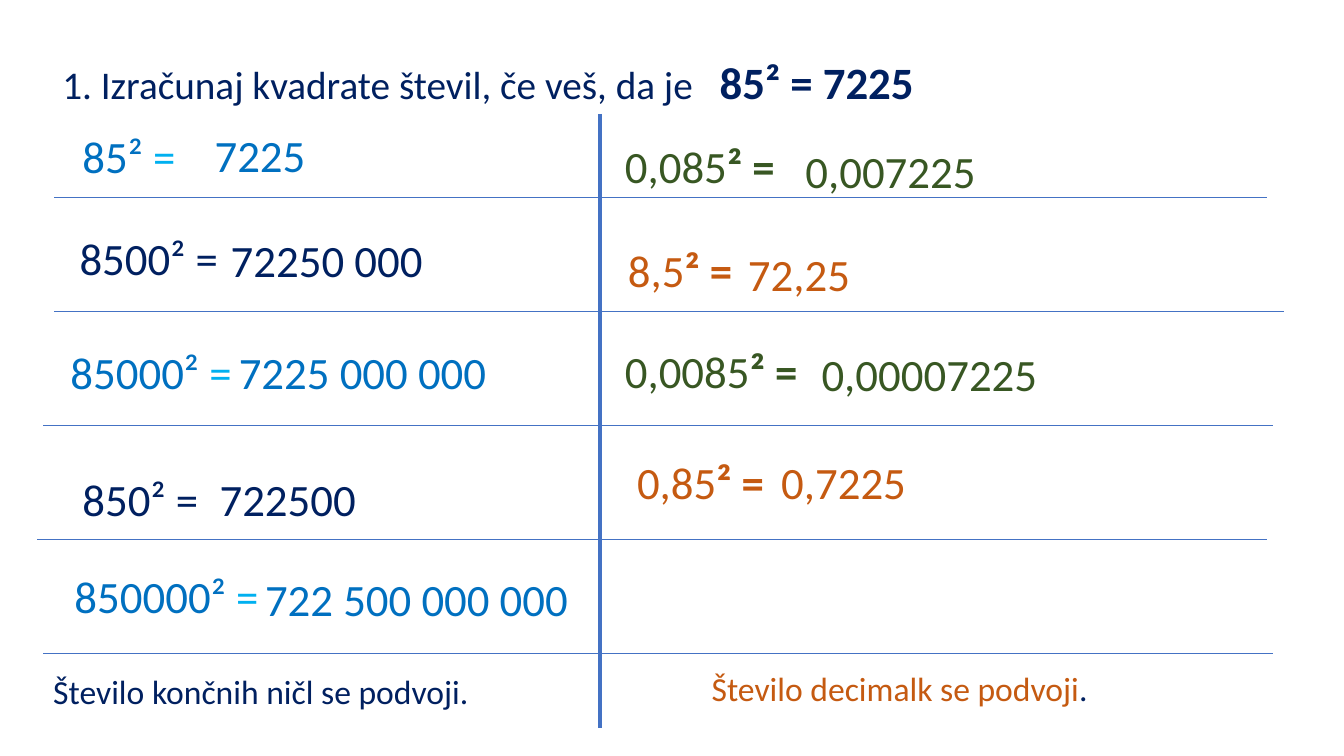
import pptx
import pptx.util
import pptx.dml.color
import pptx.enum.shapes
import pptx.enum.text
from lxml import etree
from pptx.util import Inches

RGBColor = pptx.dml.color.RGBColor
NAVY = RGBColor(0x00, 0x20, 0x60)
BLUE = RGBColor(0x00, 0x70, 0xC0)
CYAN = RGBColor(0x00, 0xB0, 0xF0)
GREEN = RGBColor(0x38, 0x57, 0x23)
ORANGE = RGBColor(0xC5, 0x5A, 0x11)
RULE_BLUE = RGBColor(0x44, 0x72, 0xC4)

ROW_HEIGHT = 1.13
GRID_TOP = 0.83
DRAWING_NS = "{http://schemas.openxmlformats.org/drawingml/2006/main}"

# Each row: base, answer, (x, y, width) of the power, (x, y, width) of the answer,
# measured from the top left of the row
ZEROS_ROWS = [
    ("85", "7225", (0.32, 0.40, 1.13), (1.63, 0.39, 1.31)),
    ("8500", "72250 000", (0.29, 0.28, 1.59), (1.79, 0.30, 2.14)),
    ("85000", "7225 000 000", (0.20, 0.28, 1.82), (1.87, 0.28, 2.95)),
    ("850", "722500", (0.32, 0.41, 1.36), (1.68, 0.41, 1.76)),
    ("850000", "722 500 000 000", (0.24, 0.24, 2.05), (2.13, 0.27, 3.79)),
]
DECIMAL_ROWS = [
    ("0,085", "0,007225", (0.15, 0.50, 1.71), (1.94, 0.55, 3.41)),
    ("8,5", "72,25", (0.18, 0.40, 1.26), (1.37, 0.44, 3.41)),
    ("0,0085", "0,00007225", (0.15, 0.27, 1.94), (2.10, 0.30, 3.41)),
    ("0,85", "0,7225", (0.27, 0.24, 2.46), (1.70, 0.24, 3.41)),
]


def add_text(slide, left, top, width, height, runs):
    """Place one paragraph; each run is (text, size, colour, bold)."""
    box = slide.shapes.add_textbox(
        Inches(left), Inches(top), Inches(width), Inches(height))
    frame = box.text_frame
    frame.word_wrap = True
    frame.auto_size = pptx.enum.text.MSO_AUTO_SIZE.SHAPE_TO_FIT_TEXT
    paragraph = frame.paragraphs[0]
    for text, size, colour, bold in runs:
        run = paragraph.add_run()
        run.text = text
        run.font.name = "Calibri"
        run.font.size = pptx.util.Pt(size)
        run.font.color.rgb = colour
        run.font.bold = bold
    return paragraph


def add_rule(slide, x1, y1, x2, y2, weight):
    rule = slide.shapes.add_connector(
        pptx.enum.shapes.MSO_CONNECTOR.STRAIGHT,
        Inches(x1), Inches(y1), Inches(x2), Inches(y2))
    rule.line.color.rgb = RULE_BLUE
    rule.line.width = pptx.util.Pt(weight)
    etree.SubElement(rule._element.spPr, DRAWING_NS + "effectLst")


def add_heading(slide, left, top, width):
    heading = add_text(slide, left, top, width, 0.64, [
        ("1. Izračunaj kvadrate števil, če veš, da je\t", 28, NAVY, False),
        ("85² = 7225", 32, NAVY, True),
    ])
    # Tab stop that sets the known square apart
    properties = heading._p.get_or_add_pPr()
    tabs = etree.SubElement(properties, DRAWING_NS + "tabLst")
    etree.SubElement(tabs, DRAWING_NS + "tab", pos=str(Inches(6.52)), algn="l")


def add_grid(slide, left, top):
    # Row dividers: start and length
    dividers = [(0.17, 12.03), (0.17, 12.2), (0.06, 12.2), (0, 12.2), (0.06, 12.2)]
    for row, (start, length) in enumerate(dividers, 1):
        y = top + row * ROW_HEIGHT
        add_rule(slide, left + start, y, left + start + length, y, 0.5)
    # Divider between the two columns
    add_rule(slide, left + 5.58, top + 0.3, left + 5.58, top + 6.39, 3)


def add_column(slide, left, top, rows, colours, equals_colours, bold_sign):
    for row, (base, answer, power_box, answer_box) in enumerate(rows):
        row_top = top + row * ROW_HEIGHT
        colour = colours[row % 2]
        equals_colour = equals_colours[row % 2]
        power_runs = [(base, 32, colour, False), ("²", 32, colour, bold_sign),
                      (" =", 32, equals_colour, bold_sign)]
        answer_runs = [(answer, 32, colour, False)]
        for (x, y, width), runs in ((power_box, power_runs), (answer_box, answer_runs)):
            add_text(slide, left + x, row_top + y, width, 0.64, runs)


def add_conclusions(slide, left, top):
    add_text(slide, left, top + 0.03, 4.43, 0.5,
             [("Število končnih ničl se podvoji.", 24, NAVY, False)])
    add_text(slide, left + 6.53, top, 4.04, 0.5,
             [("Število decimalk se podvoji", 24, ORANGE, False), (".", 24, NAVY, False)])


def main():
    presentation = pptx.Presentation()
    presentation.slide_width = Inches(13.33)
    presentation.slide_height = Inches(7.5)
    slide = presentation.slides.add_slide(presentation.slide_layouts[6])

    add_heading(slide, 0.52, 0.49, 8.74)
    add_grid(slide, 0.37, GRID_TOP)
    add_column(slide, 0.4, GRID_TOP, ZEROS_ROWS, (BLUE, NAVY), (CYAN, NAVY), False)
    add_column(slide, 5.95, GRID_TOP, DECIMAL_ROWS,
               (GREEN, ORANGE), (GREEN, ORANGE), True)
    add_conclusions(slide, 0.43, 6.58)

    presentation.save("out.pptx")


if __name__ == "__main__":
    main()
